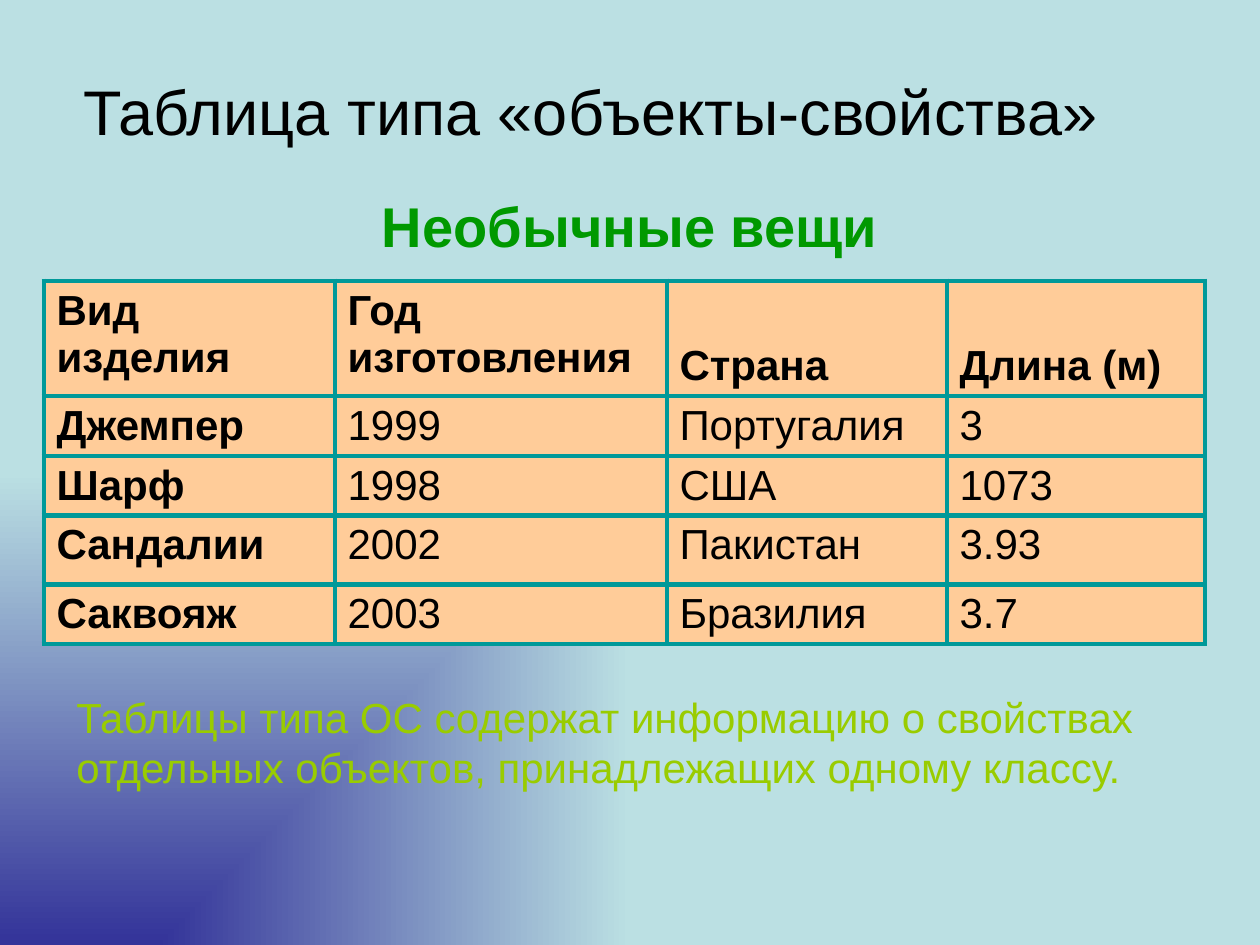
from pptx import Presentation, util as u
from pptx.dml.color import RGBColor
from pptx.enum import text
from pptx.oxml import parse_xml
from pptx.oxml.ns import nsdecls

# Content
TITLE = "Таблица типа «объекты-свойства»"
HEAD = "Необычные вещи"
NOTE = ("Таблицы типа ОС содержат информацию о свойствах "
        "отдельных объектов, принадлежащих одному классу.")
ROWS = [
    ("Вид изделия", "Год изготовления", "Страна", "Длина (м)"),
    ("Джемпер", "1999", "Португалия", "3"),
    ("Шарф", "1998", "США", "1073"),
    ("Сандалии", "2002", "Пакистан", "3.93"),
    ("Саквояж", "2003", "Бразилия", "3.7"),
]
WIDE = [291, 332, 280, 258]
HIGH = [115, 60, 59, 69, 59]
COLORS = {"dark": "333399", "pale": "BBE0E3", "cell": "FFCC99", "edge": "009999",
          "ink": "000000", "head": "009900", "note": "99CC00"}
PX = 914400 // 126


def px(*nums):
    return [u.Emu(n * PX) for n in nums]


def color(name):
    return RGBColor.from_string(COLORS[name])


def write(frame, words, size, name, bold=False, align=text.PP_ALIGN.LEFT):
    frame.word_wrap = True
    frame.text = words
    par = frame.paragraphs[0]
    par.alignment = align
    par.space_before = u.Pt(0)
    font = par.runs[0].font
    font.name, font.size, font.bold = "Arial", u.Pt(size), bold
    font.color.rgb = color(name)


def border(cell):
    props = cell._tc.get_or_add_tcPr()
    for n, side in enumerate(("lnL", "lnR", "lnT", "lnB")):
        props.insert(n, parse_xml(
            f'<a:{side} {nsdecls("a")} w="{u.Pt(3)}"><a:solidFill>'
            f'<a:srgbClr val="{COLORS["edge"]}"/></a:solidFill></a:{side}>'))


deck = Presentation()
deck.slide_width, deck.slide_height = px(1260, 945)
slide = deck.slides.add_slide(deck.slide_layouts[5])

# Background: gradient spreading from the bottom left corner
fill = slide.background.fill
fill.gradient()
for stop, name, pos in zip(fill.gradient_stops, ("dark", "pale"), (0, 1)):
    stop.color.rgb = color(name)
    stop.position = pos
grad = slide.element.xpath(".//p:bg//a:gradFill")[0]
for line in grad.xpath("a:lin"):
    grad.remove(line)
grad.append(parse_xml(f'<a:path {nsdecls("a")} path="rect">'
                      '<a:fillToRect t="100000" r="100000"/></a:path>'))

# Title
title = slide.shapes.title
title.left, title.top, title.width, title.height = px(0, 32, 1181, 157)
title.text_frame.vertical_anchor = text.MSO_ANCHOR.MIDDLE
write(title.text_frame, TITLE, 36, "ink", align=text.PP_ALIGN.CENTER)

# Table
grid = slide.shapes.add_table(len(ROWS), len(WIDE),
                              *px(44, 281, sum(WIDE), sum(HIGH))).table
grid.first_row = grid.horz_banding = False
for col, wide in zip(grid.columns, px(*WIDE)):
    col.width = wide
for row, high in zip(grid.rows, px(*HIGH)):
    row.height = high
for r, row in enumerate(ROWS):
    for c, words in enumerate(row):
        cell = grid.cell(r, c)
        write(cell.text_frame, words, 24, "ink", bold=r == 0 or c == 0)
        low = r == 0 and c > 1
        cell.vertical_anchor = text.MSO_ANCHOR.BOTTOM if low else text.MSO_ANCHOR.TOP
        cell.fill.solid()
        cell.fill.fore_color.rgb = color("cell")
        border(cell)

# Table heading and closing note
head = slide.shapes.add_textbox(*px(243, 185, 774, 79))
write(head.text_frame, HEAD, 32, "head", bold=True, align=text.PP_ALIGN.CENTER)
note = slide.shapes.add_textbox(*px(64, 685, 1131, 113))
write(note.text_frame, NOTE, 24, "note")

deck.save("out.pptx")
